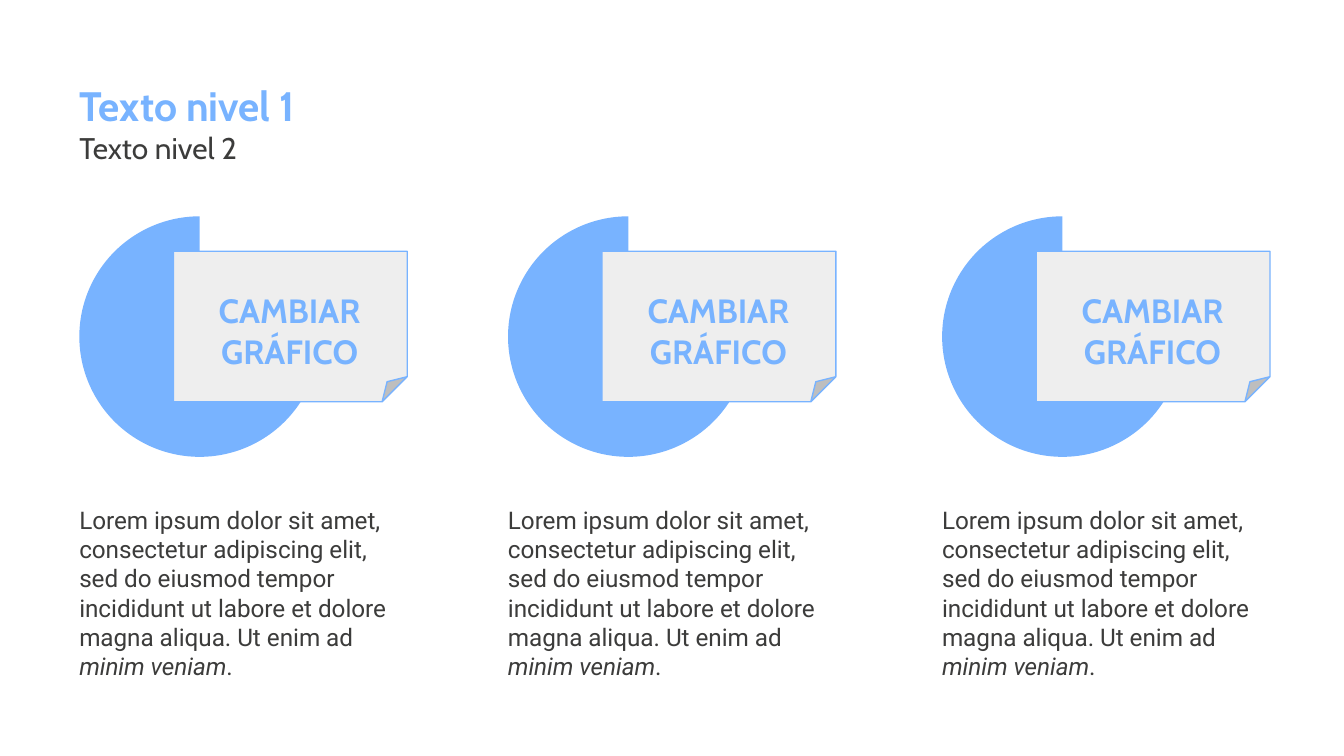
"""Build a slide with a heading and three illustrated text columns."""
from dataclasses import dataclass

from pptx import Presentation, util as u
from pptx.dml.color import RGBColor
from pptx.enum import shapes, text


@dataclass(frozen=True)
class Theme:
    """Colours, fonts and type sizes of the slide."""
    accent: str = "78B3FF"
    ink: str = "3C3C3B"
    paper: str = "EEEEEE"
    display: str = "Cabin"
    reading: str = "Roboto"
    heading: int = 22
    subheading: int = 16
    label: int = 18
    body: int = 13
    outline: float = 0.75


@dataclass(frozen=True)
class Box:
    """A rectangle in percent of the slide's width and height."""
    left: float
    top: float
    width: float
    height: float

    def moved(self, offset: float) -> "Box":
        """Return the box shifted right by an offset."""
        return Box(self.left + offset, self.top, self.width, self.height)

    def place(self) -> tuple[int, int, int, int]:
        """Return left, top, width and height in slide units."""
        return (int(WIDTH * self.left / 100), int(HEIGHT * self.top / 100),
                int(WIDTH * self.width / 100), int(HEIGHT * self.height / 100))


THEME = Theme()
WIDTH = u.Inches(10)
HEIGHT = WIDTH * 9 // 16
COLUMNS = (5.9, 37.8, 70.1)
HEADING = Box(5.9, 8.89, 36.3, 14.76)
PIE = Box(0, 28.62, 17.9, 31.82)
CARD = Box(7, 33.24, 17.4, 19.91)
LABEL = Box(7.2, 36.62, 16.9, 13.16)
BODY = Box(0, 65.07, 24.4, 25.96)
BODY_PARTS = (
    ("Lorem ipsum dolor sit amet, consectetur adipiscing elit, sed do eiusmod "
     "tempor incididunt ut labore et dolore magna aliqua. Ut enim ad ", False),
    ("minim veniam", True),
    (".", False),
)


def style_paragraph(paragraph, font: str, size: int, colour: str, bold: bool = False,
                    align=text.PP_ALIGN.LEFT) -> None:
    """Align a paragraph and format its runs."""
    paragraph.alignment = align
    for run in paragraph.runs:
        run.font.name = font
        run.font.size = u.Pt(size)
        run.font.bold = bold
        run.font.color.rgb = RGBColor.from_string(colour)


def set_frame(frame, left_inset: float = 0) -> None:
    """Give a text frame its insets, wrapping and top anchor."""
    frame.margin_left = u.Inches(left_inset)
    frame.margin_top = frame.margin_right = frame.margin_bottom = u.Inches(0.1)
    frame.word_wrap = True
    frame.auto_size = text.MSO_AUTO_SIZE.NONE
    frame.vertical_anchor = text.MSO_ANCHOR.TOP


def add_filled(parent, kind, box: Box, fill: str, line: str | None = None) -> None:
    """Add a flat preset shape with an optional outline."""
    shape = parent.add_shape(kind, *box.place())
    shape.shadow.inherit = False
    shape.fill.solid()
    shape.fill.fore_color.rgb = RGBColor.from_string(fill)
    if line:
        shape.line.color.rgb = RGBColor.from_string(line)
        shape.line.width = u.Pt(THEME.outline)
    else:
        shape.line.fill.background()


def add_heading(slide) -> None:
    """Fill and move the title placeholder."""
    title = slide.shapes.title
    title.left, title.top, title.width, title.height = HEADING.place()
    title.text_frame.text = "Texto nivel 1\nTexto nivel 2"
    set_frame(title.text_frame)
    first, second = title.text_frame.paragraphs
    style_paragraph(first, THEME.display, THEME.heading, THEME.accent, bold=True)
    style_paragraph(second, THEME.display, THEME.subheading, THEME.ink)


def add_body(slide, offset: float) -> None:
    """Add the reading text of a column."""
    frame = slide.shapes.add_textbox(*BODY.moved(offset).place()).text_frame
    set_frame(frame)
    paragraph = frame.paragraphs[0]
    for words, italic in BODY_PARTS:
        run = paragraph.add_run()
        run.text = words
        run.font.italic = italic
    style_paragraph(paragraph, THEME.reading, THEME.body, THEME.ink)


def add_card(slide, offset: float) -> None:
    """Add a grouped folded card with its label."""
    group = slide.shapes.add_group_shape().shapes
    add_filled(group, shapes.MSO_SHAPE.FOLDED_CORNER, CARD.moved(offset),
               THEME.paper, THEME.accent)
    frame = group.add_textbox(*LABEL.moved(offset).place()).text_frame
    frame.text = "CAMBIAR GRÁFICO"
    set_frame(frame, left_inset=0.1)
    style_paragraph(frame.paragraphs[0], THEME.display, THEME.label, THEME.accent,
                    bold=True, align=text.PP_ALIGN.CENTER)


def main() -> None:
    """Build and save the presentation."""
    presentation = Presentation()
    presentation.slide_width, presentation.slide_height = WIDTH, HEIGHT
    slide = presentation.slides.add_slide(presentation.slide_layouts.get_by_name("Title Only"))
    add_heading(slide)
    for offset in COLUMNS:
        add_filled(slide.shapes, shapes.MSO_SHAPE.PIE, PIE.moved(offset), THEME.accent)
        add_body(slide, offset)
        add_card(slide, offset)
    presentation.save("out.pptx")


if __name__ == "__main__":
    main()
